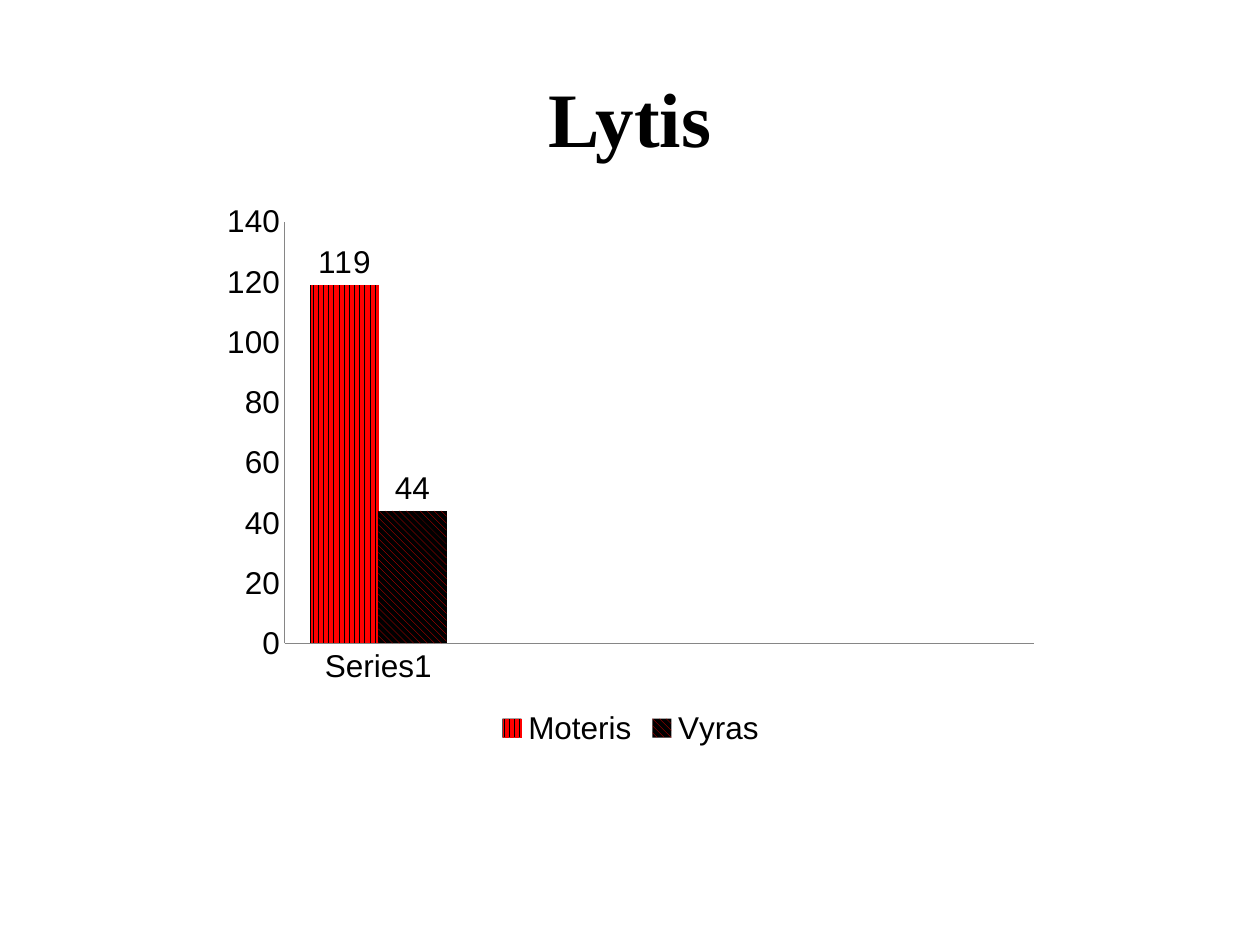
from pptx import Presentation
from pptx.chart.data import CategoryChartData
from pptx.dml.color import RGBColor
from pptx.enum.chart import XL_CHART_TYPE, XL_LABEL_POSITION, XL_LEGEND_POSITION, XL_TICK_MARK
from pptx.enum.dml import MSO_PATTERN
from pptx.enum.text import MSO_ANCHOR, PP_ALIGN
from pptx.util import Inches, Pt

COLUMNS = XL_CHART_TYPE.COLUMN_CLUSTERED
NO_TICK = XL_TICK_MARK.NONE

TITLE = "Lytis"
CATEGORIES = ["Series1", "", "", ""]
SERIES = [
    ("Moteris", 119, MSO_PATTERN.DARK_VERTICAL),
    ("Vyras", 44, MSO_PATTERN.WIDE_DOWNWARD_DIAGONAL),
]
RED, BLACK, GRAY = "FF0000", "000000", "868686"


def rgb(color):
    return RGBColor.from_string(color)


def set_font(font, name, size, bold=False):
    font.name = name
    font.size = Pt(size)
    font.bold = bold
    font.color.rgb = rgb(BLACK)


def add_title(s):
    box = s.shapes.add_textbox(Inches(0.5), Inches(0.3), Inches(9), Inches(1.25))
    tf = box.text_frame
    tf.word_wrap = True
    tf.vertical_anchor = MSO_ANCHOR.MIDDLE
    p = tf.paragraphs[0]
    p.text = TITLE
    p.alignment = PP_ALIGN.CENTER
    set_font(p.font, "Times New Roman", 44, bold=True)


def add_gender_chart(s):
    data = CategoryChartData()
    data.categories = CATEGORIES
    for name, count, _ in SERIES:
        data.add_series(name, [count] + [None] * (len(CATEGORIES) - 1))
    chart = s.shapes.add_chart(
        COLUMNS, Inches(1.67), Inches(1.53), Inches(6.67), Inches(4.44), data
    ).chart
    set_font(chart.font, "Arial", 18)
    chart.has_title = False
    chart.has_legend = True
    chart.legend.position = XL_LEGEND_POSITION.BOTTOM
    chart.legend.include_in_layout = False

    for axis in (chart.category_axis, chart.value_axis):
        axis.major_tick_mark = axis.minor_tick_mark = NO_TICK
        axis.has_major_gridlines = False
        axis.format.line.color.rgb = rgb(GRAY)
        axis.format.line.width = Pt(0.75)
    chart.value_axis.minimum_scale = 0
    chart.value_axis.maximum_scale = 140
    chart.value_axis.major_unit = 20

    plot = chart.plots[0]
    plot.gap_width = 75
    plot.overlap = 0
    plot.vary_by_categories = False
    for series, (_, _, pattern) in zip(plot.series, SERIES):
        fill = series.format.fill
        fill.patterned()
        fill.pattern = pattern
        fill.fore_color.rgb = rgb(RED)
        fill.back_color.rgb = rgb(BLACK)
        series.invert_if_negative = False
        series.data_labels.show_value = True
        series.data_labels.position = XL_LABEL_POSITION.OUTSIDE_END


def main():
    prs = Presentation()
    prs.slide_width, prs.slide_height = Inches(10), Inches(7.5)
    s = prs.slides.add_slide(prs.slide_layouts[6])
    add_title(s)
    add_gender_chart(s)
    prs.save("out.pptx")


if __name__ == "__main__":
    main()
